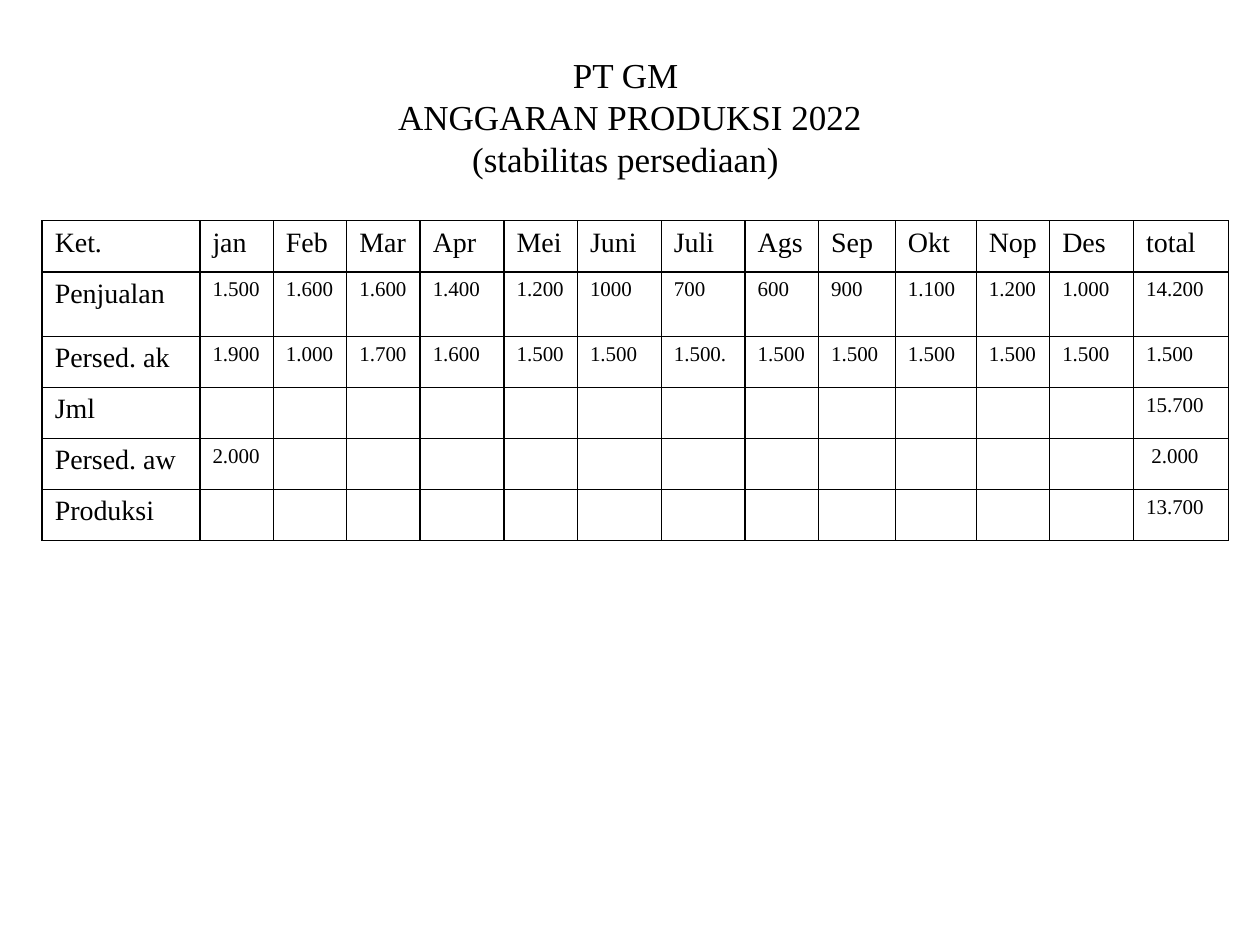
from lxml import etree
from pptx import Presentation
from pptx import util as u
from pptx.dml.color import RGBColor
from pptx.enum import text
from pptx.oxml import ns

FONT = "Times New Roman"
COLORS = {"ink": "000000", "paper": "FFFFFF"}
TITLE = ["PT GM ", "ANGGARAN PRODUKSI 2022", "(stabilitas persediaan) "]
BLANK = [""] * 11
ROWS = [
    ["Ket.", "jan", "Feb", "Mar", "Apr", "Mei", "Juni", "Juli", "Ags",
     "Sep", "Okt", "Nop", "Des", "total"],
    ["Penjualan", "1.500", "1.600", "1.600", "1.400", "1.200", "1000", "700",
     "600", "900", "1.100", "1.200", "1.000", "14.200"],
    ["Persed. ak", "1.900", "1.000", "1.700", "1.600", "1.500", "1.500",
     "1.500.", "1.500", "1.500", "1.500", "1.500", "1.500", "1.500"],
    ["Jml", "", *BLANK, "15.700"],
    ["Persed. aw", "2.000", *BLANK, " 2.000"],
    ["Produksi", "", *BLANK, "13.700"],
]
SLIM, WIDE = 1.48, 1.69
WIDTHS = [3.18, SLIM, SLIM, SLIM, WIDE, SLIM, WIDE, WIDE, SLIM,
          1.55, 1.63, SLIM, WIDE, 1.91]
HEIGHTS = [1.03, 1.3, 1.03, 1.03, 1.03, 1.03]


def add_run(para, words, size):
    run = para.add_run()
    run.text = words
    run.font.name = FONT
    run.font.size = u.Pt(size)
    run.font.color.rgb = RGBColor.from_string(COLORS["ink"])


def add_title(slide, lines):
    box = slide.shapes.add_textbox(u.Cm(1.27), u.Cm(0.76), u.Cm(22.86), u.Cm(3.18))
    frame = box.text_frame
    frame.word_wrap = True
    frame.vertical_anchor = text.MSO_ANCHOR.MIDDLE
    para = frame.paragraphs[0]
    para.alignment = text.PP_ALIGN.CENTER
    for i, line in enumerate(lines):
        if i:
            para.add_line_break()
        add_run(para, line, 20)
    for brk in para._p.findall(ns.qn("a:br")):
        etree.SubElement(brk, ns.qn("a:rPr"), sz="2000")


def set_edges(cell):
    props = cell._tc.get_or_add_tcPr()
    for side in ("lnL", "lnR", "lnT", "lnB"):
        line = etree.SubElement(props, ns.qn("a:" + side), w=str(u.Pt(1)))
        fill = etree.SubElement(line, ns.qn("a:solidFill"))
        etree.SubElement(fill, ns.qn("a:srgbClr"), val=COLORS["ink"])


def fill_cell(cell, words, size):
    set_edges(cell)
    cell.fill.solid()
    cell.fill.fore_color.rgb = RGBColor.from_string(COLORS["paper"])
    if words:
        add_run(cell.text_frame.paragraphs[0], words, size)


def add_budget(slide, rows):
    frame = slide.shapes.add_table(
        len(rows), len(WIDTHS), u.Cm(0.85), u.Cm(4.45),
        u.Cm(sum(WIDTHS)), u.Cm(sum(HEIGHTS)))
    table = frame.table
    table.first_row = table.horz_banding = False
    for col, width in zip(table.columns, WIDTHS):
        col.width = u.Cm(width)
    for row, height in zip(table.rows, HEIGHTS):
        row.height = u.Cm(height)
    for r, row in enumerate(rows):
        for c, words in enumerate(row):
            size = 16 if r == 0 or c == 0 else 12
            fill_cell(table.cell(r, c), words, size)


def main():
    deck = Presentation()
    deck.slide_width, deck.slide_height = u.Cm(25.4), u.Cm(19.05)
    slide = deck.slides.add_slide(deck.slide_layouts[6])
    add_title(slide, TITLE)
    add_budget(slide, ROWS)
    deck.save("out.pptx")


if __name__ == "__main__":
    main()
